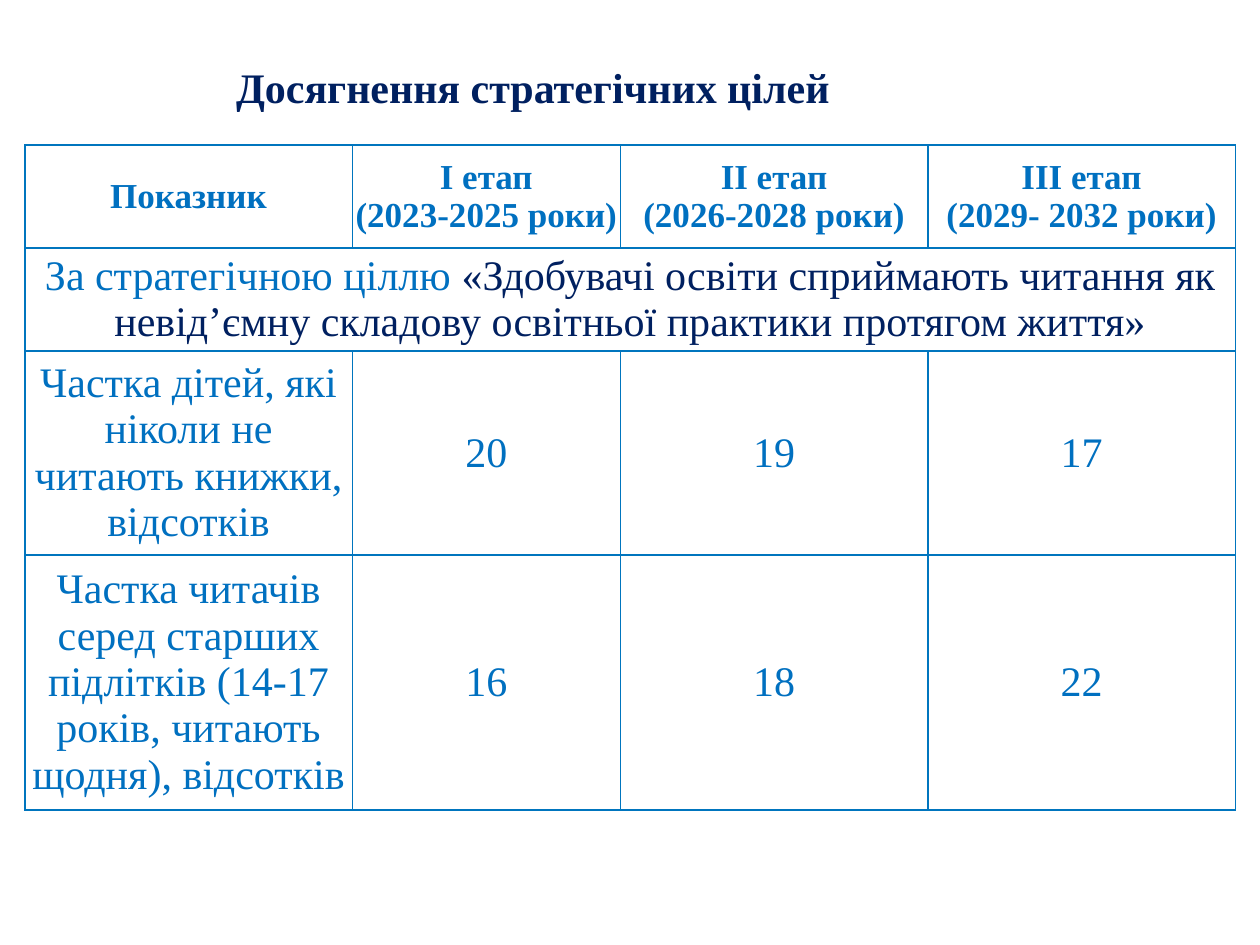
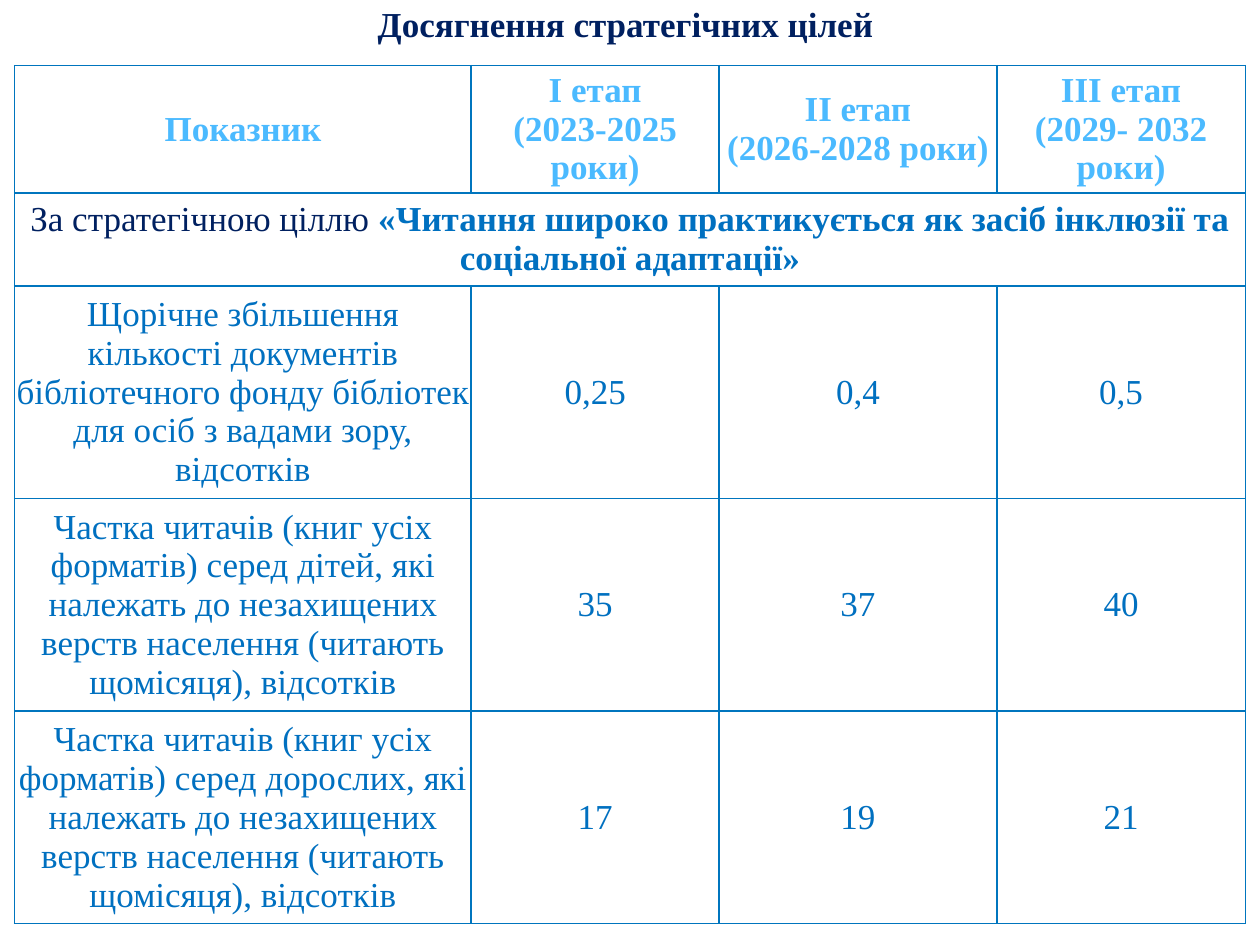
from lxml import etree
from pptx import Presentation
from pptx.dml.color import RGBColor
from pptx.enum.text import MSO_ANCHOR as Anchor, MSO_AUTO_SIZE as Fit, PP_ALIGN as Align
from pptx.oxml.ns import qn
from pptx.util import Pt

# Shared look
FONT = "Times New Roman"
NAVY = RGBColor(0x00, 0x20, 0x60)
BLUE = RGBColor(0x00, 0x70, 0xC0)
SKY = RGBColor(0x4B, 0xBA, 0xFF)
EDGE = RGBColor(0x00, 0x75, 0xBE)
WHITE = RGBColor(0xFF, 0xFF, 0xFF)

TITLE = "Досягнення стратегічних цілей "
AIM = "За стратегічною ціллю "
HEADS = ["Показник", "I етап\n(2023-2025 роки)",
         "II етап\n(2026-2028 роки)", "III етап\n(2029- 2032 роки)"]


def write(frame, runs, size):
    """Fill a frame with one centred paragraph of (text, colour, bold) runs."""
    para = frame.paragraphs[0]
    para.alignment = Align.CENTER
    for text, color, bold in runs:
        for i, line in enumerate(text.split("\n")):
            if i:
                para.add_line_break()
            run = para.add_run()
            run.text = line
            font = run.font
            font.name, font.size, font.bold = FONT, Pt(size), bold
            font.color.rgb = color


def edge(cell):
    """Draw a 1 pt line on all four sides of a cell."""
    props = cell._tc.get_or_add_tcPr()
    for i, side in enumerate("LRTB"):
        line = etree.Element(qn(f"a:ln{side}"), w=str(Pt(1)))
        fill = etree.SubElement(line, qn("a:solidFill"))
        etree.SubElement(fill, qn("a:srgbClr"), val=str(EDGE))
        props.insert(i, line)


def add_title(slide, box, size):
    title = slide.shapes.title
    title.left, title.top, title.width, title.height = map(Pt, box)
    frame = title.text_frame
    frame.word_wrap = True
    frame.auto_size = Fit.NONE
    frame.vertical_anchor = Anchor.TOP
    write(frame, [(TITLE, NAVY, True)], size)


def add_goals(slide, left, top, cols, rows, head, aim, data, size):
    """Place the table: head row, merged aim row, then one row per measure."""
    shape = slide.shapes.add_table(len(rows), len(cols), Pt(left), Pt(top),
                                   Pt(sum(cols)), Pt(sum(rows)))
    table = shape.table
    for col, width in zip(table.columns, cols):
        col.width = Pt(width)
    for row, height in zip(table.rows, rows):
        row.height = Pt(height)

    for cell in table.iter_cells():
        cell.margin_left = cell.margin_right = Pt(0.72)
        cell.margin_top = cell.margin_bottom = Pt(0.72)
        cell.vertical_anchor = Anchor.MIDDLE
        cell.fill.solid()
        cell.fill.fore_color.rgb = WHITE
        edge(cell)

    for c, text in enumerate(HEADS):
        write(table.cell(0, c).text_frame, [(text, head, True)], 20)
    table.cell(1, 0).merge(table.cell(1, len(cols) - 1))
    write(table.cell(1, 0).text_frame, aim, size)
    for r, line in enumerate(data, 2):
        for c, text in enumerate(line):
            write(table.cell(r, c).text_frame, [(text, BLUE, False)], size)


def add_slide(deck):
    return deck.slides.add_slide(deck.slide_layouts[5])


def add_habit(deck):
    slide = add_slide(deck)
    add_title(slide, (127.5, 31.7, 360, 36), 24)
    aim = [(AIM, BLUE, False),
           ("«Здобувачі освіти сприймають читання як невід’ємну складову "
            "освітньої практики протягом життя»", NAVY, False)]
    data = [
        ("Частка дітей, які ніколи не читають книжки, відсотків",
         "20", "19", "17"),
        ("Частка читачів серед старших підлітків (14-17 років, "
         "читають щодня), відсотків", "16", "18", "22"),
    ]
    add_goals(slide, 14.2, 82.8, (187.1, 153.2, 175.7, 175.7),
              (59, 58.7, 116.6, 145.7), BLUE, aim, data, 24)


def add_access(deck):
    slide = add_slide(deck)
    add_title(slide, (180, -2.2, 360, 31.7), 20)
    aim = [(AIM, NAVY, False),
           ("«Читання широко практикується як засіб інклюзії та "
            "соціальної адаптації»", BLUE, True)]
    share = ("Частка читачів (книг усіх форматів) серед {}, які належать до "
             "незахищених верств населення (читають щомісяця), відсотків")
    data = [
        ("Щорічне збільшення кількості документів бібліотечного фонду "
         "бібліотек для осіб з вадами зору, відсотків", "0,25", "0,4", "0,5"),
        (share.format("дітей"), "35", "37", "40"),
        (share.format("дорослих"), "17", "19", "21"),
    ]
    add_goals(slide, 8.4, 37.5, (260.9, 141.7, 158.7, 142),
              (72.7, 53.2, 121.5, 121.5, 121.5), SKY, aim, data, 20)


def main():
    deck = Presentation()
    deck.slide_width, deck.slide_height = Pt(720), Pt(540)
    add_habit(deck)
    add_access(deck)
    deck.save("out.pptx")


if __name__ == "__main__":
    main()
